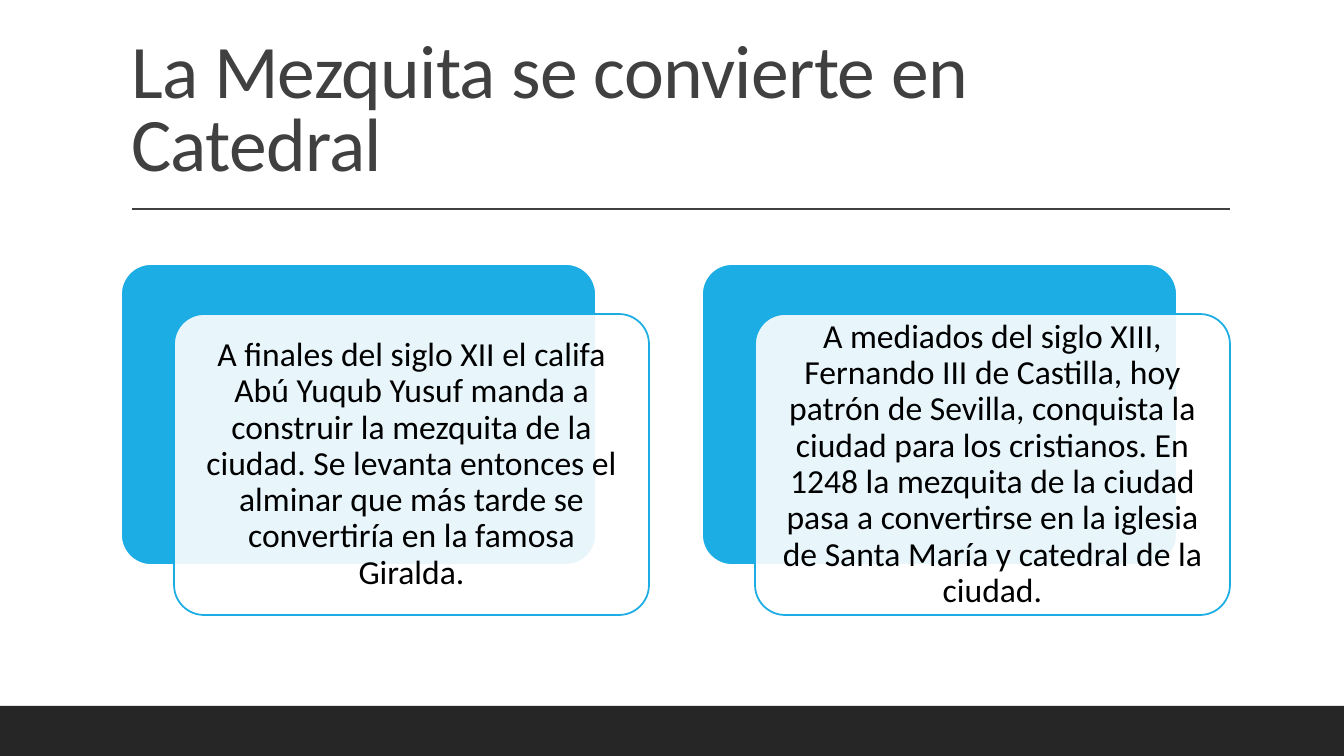
import pptx
import pptx.dml.color
import pptx.enum.shapes
import pptx.enum.text
import pptx.oxml
import pptx.oxml.ns
import pptx.util
import lxml.etree

# Content
TITLE = "La Mezquita se convierte en Catedral"
CARDS = [
    "A finales del siglo XII el califa Abú Yuqub Yusuf manda a construir la "
    "mezquita de la ciudad. Se levanta entonces el alminar que más tarde se "
    "convertiría en la famosa Giralda.",
    "A mediados del siglo XIII, Fernando III de Castilla, hoy patrón de Sevilla, "
    "conquista la ciudad para los cristianos. En 1248 la mezquita de la ciudad "
    "pasa a convertirse en la iglesia de Santa María y catedral de la ciudad.",
]

# Style and layout, lengths in px
FONT = "Calibri"
WHITE = pptx.dml.color.RGBColor(0xFF, 0xFF, 0xFF)
BLACK = pptx.dml.color.RGBColor(0, 0, 0)
BLUE = pptx.dml.color.RGBColor(0x1C, 0xAD, 0xE4)
GREY = pptx.dml.color.RGBColor(0x40, 0x40, 0x40)
DARK = pptx.dml.color.RGBColor(0x26, 0x26, 0x26)
PAGE_WIDTH, PAGE_HEIGHT = 1344, 756
FOOTER_HEIGHT = 50
CARD_LEFT, CARD_TOP, CARD_WIDTH, CARD_HEIGHT = 121, 264, 475, 301
CARD_STEP = 581
FRONT_X, FRONT_Y = 53, 50
INSET = 10
ANCHOR = pptx.enum.text.MSO_ANCHOR
ALIGN = pptx.enum.text.PP_ALIGN
SHAPE = pptx.enum.shapes.MSO_SHAPE


def px(length):
    return pptx.util.Emu(round(length * 914400 / 100.8))


def write(box, text, size, color, align, anchor, line_spacing, tracking=0):
    frame = box.text_frame
    frame.word_wrap = True
    frame.auto_size = pptx.enum.text.MSO_AUTO_SIZE.NONE
    frame.vertical_anchor = anchor
    para = frame.paragraphs[0]
    para.alignment = align
    para.line_spacing = line_spacing
    span = para.add_run()
    span.text = text
    span.font.name = FONT
    span.font.size = pptx.util.Pt(size)
    span.font.color.rgb = color
    if tracking:
        span.font._element.set("spc", str(tracking))


def add_box(kind, left, top, width, height, fill, line=None, opacity=100):
    box = page.shapes.add_shape(kind, px(left), px(top), px(width), px(height))
    box.shadow.inherit = False
    box.fill.solid()
    box.fill.fore_color.rgb = fill
    if opacity < 100:
        color = box._element.spPr.find(".//" + pptx.oxml.ns.qn("a:srgbClr"))
        alpha = lxml.etree.SubElement(color, pptx.oxml.ns.qn("a:alpha"))
        alpha.set("val", str(opacity * 1000))
    if line is None:
        box.line.fill.background()
    else:
        box.line.color.rgb = line
        box.line.width = pptx.util.Pt(1.25)
    return box


def add_card(left, top, **look):
    card = add_box(SHAPE.ROUNDED_RECTANGLE, left, top, CARD_WIDTH, CARD_HEIGHT, **look)
    card.adjustments[0] = 0.1
    return card


deck = pptx.Presentation()
deck.slide_width, deck.slide_height = px(PAGE_WIDTH), px(PAGE_HEIGHT)
page = deck.slides.add_slide(deck.slide_layouts[5])
page.background.fill.solid()
page.background.fill.fore_color.rgb = WHITE

# Title and the rule under it
title = page.shapes.title
title.left, title.top, title.width, title.height = px(121), px(31), px(1109), px(160)
write(title, TITLE, size=54, color=GREY, align=ALIGN.LEFT, anchor=ANCHOR.BOTTOM,
      line_spacing=0.8, tracking=-50)
rule = page.shapes.add_connector(
    pptx.enum.shapes.MSO_CONNECTOR.STRAIGHT, px(132), px(209), px(1230), px(209))
rule.line.color.rgb = GREY
rule.line.width = pptx.util.Pt(1)
lxml.etree.SubElement(rule._element.spPr, pptx.oxml.ns.qn("a:effectLst"))

# Footer band
add_box(SHAPE.RECTANGLE, 0, PAGE_HEIGHT - FOOTER_HEIGHT, PAGE_WIDTH, FOOTER_HEIGHT, DARK)

# Cards: a blue back and a translucent front with the text
for index, text in enumerate(CARDS):
    left = CARD_LEFT + index * CARD_STEP
    add_card(left, CARD_TOP, fill=BLUE, line=WHITE)
    front = add_card(left + FRONT_X, CARD_TOP + FRONT_Y, fill=WHITE, line=BLUE, opacity=90)
    frame = front.text_frame
    frame.margin_left = frame.margin_right = px(INSET)
    frame.margin_top = frame.margin_bottom = px(INSET)
    write(front, text, size=24, color=BLACK, align=ALIGN.CENTER, anchor=ANCHOR.MIDDLE,
          line_spacing=0.9)

deck.save("out.pptx")
